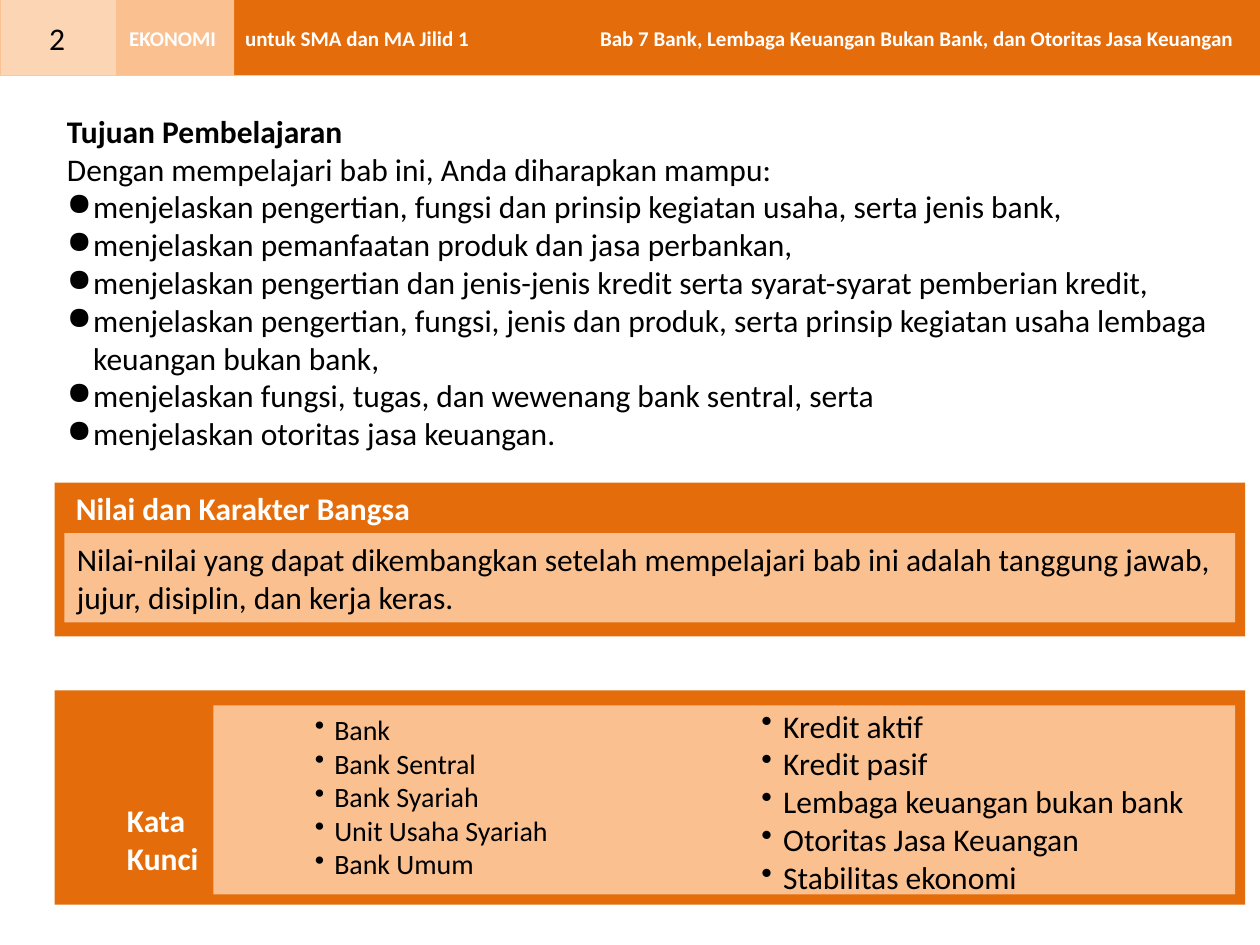
from lxml import etree
from pptx import Presentation
from pptx import util as u
from pptx.dml import color
from pptx.enum import shapes, text
from pptx.oxml import ns

COLORS = {
    "dark": "E46C0A",
    "mid": "FAC090",
    "light": "FCD5B5",
    "white": "FFFFFF",
    "black": "000000",
}
LEFT, CENTER, RIGHT = text.PP_ALIGN.LEFT, text.PP_ALIGN.CENTER, text.PP_ALIGN.RIGHT
TOP, MIDDLE = text.MSO_ANCHOR.TOP, text.MSO_ANCHOR.MIDDLE

GOALS = [
    "menjelaskan pengertian, fungsi dan prinsip kegiatan usaha, serta jenis bank,",
    "menjelaskan pemanfaatan produk dan jasa perbankan,",
    "menjelaskan pengertian dan jenis-jenis kredit serta syarat-syarat pemberian kredit,",
    "menjelaskan pengertian, fungsi, jenis dan produk, serta prinsip kegiatan usaha "
    "lembaga keuangan bukan bank,",
    "menjelaskan fungsi, tugas, dan wewenang bank sentral, serta",
    "menjelaskan otoritas jasa keuangan.",
]
BANK_TERMS = ["Bank", "Bank Sentral", "Bank Syariah", "Unit Usaha Syariah", "Bank Umum"]
CREDIT_TERMS = [
    "Kredit aktif",
    "Kredit pasif",
    "Lembaga keuangan bukan bank",
    "Otoritas Jasa Keuangan",
    "Stabilitas ekonomi",
]


def rgb(name):
    """Return the palette colour with this name."""
    return color.RGBColor.from_string(COLORS[name])


def add_bullet(p, char, indent):
    """Give a paragraph a bullet with a hanging indent in centimetres."""
    pPr = p._p.get_or_add_pPr()
    pPr.set("marL", str(u.Cm(indent)))
    pPr.set("indent", str(-u.Cm(indent)))
    etree.SubElement(pPr, ns.qn("a:buChar")).set("char", char)


def write(tf, content, size=18, bold=False, fill="black", align=LEFT, bullet=None, indent=0):
    """Append one formatted paragraph to a text frame."""
    p = tf.add_paragraph() if tf.text else tf.paragraphs[0]
    p.alignment = align
    if bullet:
        add_bullet(p, bullet, indent)
    r = p.add_run()
    r.text = content
    r.font.name = "Calibri"
    r.font.size = u.Pt(size)
    r.font.bold = bold
    r.font.color.rgb = rgb(fill)


def add_rect(parent, x, y, w, h, fill):
    """Add a plain filled rectangle."""
    sp = parent.shapes.add_shape(
        shapes.MSO_SHAPE.RECTANGLE, u.Cm(x), u.Cm(y), u.Cm(w), u.Cm(h))
    sp.shadow.inherit = False
    sp.fill.solid()
    sp.fill.fore_color.rgb = rgb(fill)
    sp.line.fill.background()
    return sp


def add_text(parent, x, y, w, h, lines, anchor=TOP, wrap=True, **fmt):
    """Add a text box with one paragraph per line and return its frame."""
    tf = parent.shapes.add_textbox(u.Cm(x), u.Cm(y), u.Cm(w), u.Cm(h)).text_frame
    tf.word_wrap = wrap
    tf.vertical_anchor = anchor
    for line in lines:
        write(tf, line, **fmt)
    return tf


def add_header(s, x, y, w, h):
    """Add the header band with page number, subject and chapter."""
    add_rect(s, x, y, w, h, "dark")
    add_rect(s, x, y, 4.72, h, "mid")
    add_rect(s, x + 0.02, y, 2.32, h, "light")
    labels = [
        (4.6, 5.2, "untuk SMA dan MA Jilid 1", CENTER),
        (11.7, 13.42, "Bab 7 Bank, Lembaga Keuangan Bukan Bank, dan Otoritas Jasa Keuangan", RIGHT),
        (2.18, 2.6, "EKONOMI", CENTER),
    ]
    for dx, width, label, align in labels:
        add_text(s, x + dx, y + 0.25, width, 1.02, [label], anchor=MIDDLE,
                 size=12, bold=True, fill="white", align=align)
    add_text(s, x + 0.45, y + 0.25, 1.4, 1.02, ["2"], align=CENTER)


def add_goals(s, x, y, w, h):
    """Add the learning goals."""
    tf = add_text(s, x, y, w, h, ["Tujuan Pembelajaran"], bold=True)
    write(tf, "Dengan mempelajari bab ini, Anda diharapkan mampu:")
    for goal in GOALS:
        write(tf, goal, bullet="●", indent=0.53)


def add_values(s, x, y, w, h):
    """Add the framed panel on national values and character."""
    g = s.shapes.add_group_shape()
    add_rect(g, x, y, w, h, "dark")
    sp = add_rect(g, x + 0.2, y + 1.02, w - 0.4, h - 1.3, "mid")
    sp.text_frame.vertical_anchor = MIDDLE
    write(sp.text_frame, "Nilai-nilai yang dapat dikembangkan setelah mempelajari bab ini "
          "adalah tanggung jawab, jujur, disiplin, dan kerja keras.")
    add_text(g, x + 0.18, y, 7.87, 1.02, ["Nilai dan Karakter Bangsa"],
             wrap=False, bold=True, fill="white")


def add_keywords(s, x, y, w, h):
    """Add the framed keyword panel with two bulleted columns."""
    g = s.shapes.add_group_shape()
    add_rect(g, x, y, w, h, "dark")
    add_rect(g, x + 3.2, y + 0.3, w - 3.4, h - 0.51, "mid")
    add_text(g, x + 1.21, y + 2.1, 2.26, 1.8, ["Kata", "Kunci"], bold=True, fill="white")
    add_text(g, x + 5, y + 0.32, 8.8, 3.68, BANK_TERMS, size=16, bullet="•", indent=0.39)
    add_text(g, x + 14, y + 0.2, 11, 4.1, CREDIT_TERMS, bullet="•", indent=0.44)


def main():
    """Build the slide and save it."""
    prs = Presentation()
    prs.slide_width, prs.slide_height = u.Cm(25.4), u.Cm(19.05)
    s = prs.slides.add_slide(prs.slide_layouts[6])
    add_header(s, 0, 0, 25.4, 1.52)
    add_goals(s, 1.1, 2.13, 24.13, 7.2)
    add_values(s, 1.1, 9.73, 24, 3.1)
    add_keywords(s, 1.1, 13.92, 24, 4.32)
    prs.save("out.pptx")


if __name__ == "__main__":
    main()
